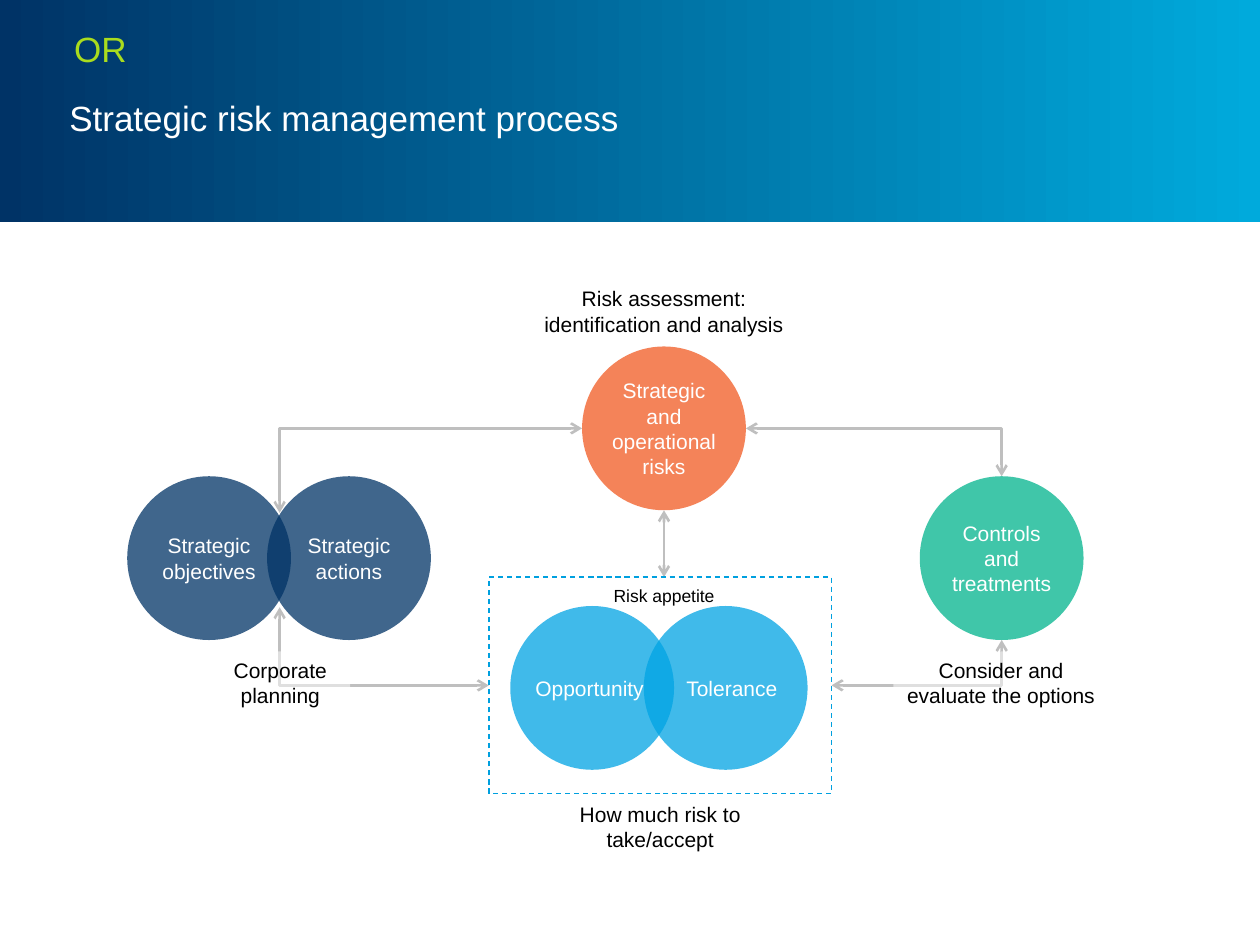
import pptx
import pptx.util
import pptx.dml.color
import pptx.enum.dml
import pptx.enum.shapes
import pptx.enum.text
import pptx.oxml
import pptx.oxml.ns
from dataclasses import dataclass


@dataclass(frozen=True)
class Theme:
    font: str = "Arial"
    white: str = "FFFFFF"
    black: str = "000000"
    navy: str = "003366"
    cyan: str = "00AADC"
    sky: str = "00A4E4"
    orange: str = "F15A22"
    green: str = "00B48D"
    lime: str = "AADC1E"
    arrow: str = "BFBFBF"
    frame: str = "00A0DF"
    heading: int = 20
    body: int = 12
    small: int = 10


THEME = Theme()
WIDTH, HEIGHT = 10, 7.5
BANNER_HEIGHT = 1.76
DIAMETER = 1.3
RADIUS = DIAMETER / 2
UPPER, MIDDLE, LOWER = 3.4, 4.43, 5.46  # centre lines of the circles
RISK_X, CONTROL_X, OVERLAP_X = 5.27, 7.95, 2.22
FRAME = (3.88, 4.58, 2.72, 1.72)
FRAME_RIGHT = FRAME[0] + FRAME[2]
FRAME_MIDDLE = FRAME[1] + FRAME[3] / 2

# text, centre x, centre y, colour, left inset, right inset
CIRCLES = [
    ("Strategic actions", 2.77, MIDDLE, THEME.navy, 0.1, 0.1),
    ("Strategic objectives", 1.66, MIDDLE, THEME.navy, 0.04, 0.04),
    ("Tolerance", 5.76, LOWER, THEME.sky, 0.1, 0),
    ("Opportunity", 4.7, LOWER, THEME.sky, 0, 0.04),
    ("Strategic and operational risks", RISK_X, UPPER, THEME.orange, 0.04, 0.04),
    ("Controls and treatments", CONTROL_X, MIDDLE, THEME.green, 0.04, 0.04),
]
# text, (left, top, width, height), size
CAPTIONS = [
    ("How much risk to take/accept", (4.15, 6.31, 2.18, 0.5), THEME.body),
    ("Risk assessment: identification and analysis", (4.12, 2.22, 2.3, 0.5), THEME.body),
    ("Risk appetite", (4.43, 4.59, 1.68, 0.27), THEME.small),
]
VEILED_CAPTIONS = [
    ("Consider and evaluate the options", (7.09, 5.17, 1.71, 0.5)),
    ("Corporate planning", (1.67, 5.17, 1.11, 0.5)),
]
# Each elbow leaves horizontally from its first point and turns once.
ELBOWS = [
    ((RISK_X - RADIUS, UPPER), (OVERLAP_X, 4.07)),
    ((FRAME[0], FRAME_MIDDLE), (OVERLAP_X, 4.82)),
    ((RISK_X + RADIUS, UPPER), (CONTROL_X, MIDDLE - RADIUS)),
    ((FRAME_RIGHT, FRAME_MIDDLE), (CONTROL_X, MIDDLE + RADIUS)),
]

SHAPES = pptx.enum.shapes.MSO_SHAPE
CONNECTORS = pptx.enum.shapes.MSO_CONNECTOR
ANCHOR = pptx.enum.text.MSO_ANCHOR
ALIGN = pptx.enum.text.PP_ALIGN


def inches(values):
    return [pptx.util.Inches(value) for value in values]


def rgb(value):
    return pptx.dml.color.RGBColor.from_string(value)


def add_child(parent, tag, **attributes):
    child = pptx.oxml.ns.qn(tag)
    element = parent.makeelement(child, attributes)
    parent.append(element)


def write(box, text, color, size, align=ALIGN.CENTER, anchor=ANCHOR.TOP,
          insets=(0.1, 0.05, 0.1, 0.05)):
    frame = box.text_frame
    frame.text = text
    frame.word_wrap = True
    frame.vertical_anchor = anchor
    (frame.margin_left, frame.margin_top,
     frame.margin_right, frame.margin_bottom) = inches(insets)
    paragraph = frame.paragraphs[0]
    paragraph.alignment = align
    for span in paragraph.runs:
        span.font.name = THEME.font
        span.font.size = pptx.util.Pt(size)
        span.font.color.rgb = rgb(color)


def add_shape(page, kind, area, color=None, opacity=100):
    shape = page.shapes.add_shape(kind, *inches(area))
    shape.shadow.inherit = False
    shape.line.fill.background()
    if color is None:
        shape.fill.background()
    else:
        shape.fill.solid()
        shape.fill.fore_color.rgb = rgb(color)
        if opacity < 100:
            fill = shape.fill._xPr.find(pptx.oxml.ns.qn("a:solidFill"))
            add_child(fill[0], "a:alpha", val=str(opacity * 1000))
    return shape


def add_arrow(page, kind, start, end):
    """Draw a connector with an open arrowhead at both ends."""
    arrow = page.shapes.add_connector(kind, *inches(start + end))
    arrow.line.color.rgb = rgb(THEME.arrow)
    arrow.line.width = pptx.util.Pt(1.5)
    properties = arrow._element.spPr
    if kind == CONNECTORS.ELBOW:
        properties.find(pptx.oxml.ns.qn("a:prstGeom")).set("prst", "bentConnector2")
    line = arrow.line._get_or_add_ln()
    add_child(line, "a:headEnd", type="arrow")
    add_child(line, "a:tailEnd", type="arrow")
    add_child(properties, "a:effectLst")


def add_banner(page):
    banner = add_shape(page, SHAPES.RECTANGLE, (0, 0, WIDTH, BANNER_HEIGHT), THEME.navy)
    banner.fill.gradient()
    banner.fill.gradient_angle = 0
    for stop, color, position in zip(banner.fill.gradient_stops,
                                     (THEME.navy, THEME.cyan), (0, 1)):
        stop.color.rgb = rgb(color)
        stop.position = position
    title = page.shapes.add_textbox(*inches((0.51, 0.3, 7.48, 1.26)))
    write(title, "Strategic risk management process", THEME.white, THEME.heading,
          ALIGN.LEFT, ANCHOR.MIDDLE, (0.04,) * 4)


def main():
    deck = pptx.Presentation()
    deck.slide_width, deck.slide_height = inches((WIDTH, HEIGHT))
    page = deck.slides.add_slide(deck.slide_layouts[6])
    add_banner(page)

    for text, x, y, color, left, right in CIRCLES:
        area = (x - RADIUS, y - RADIUS, DIAMETER, DIAMETER)
        circle = add_shape(page, SHAPES.OVAL, area, color, 75)
        write(circle, text, THEME.white, THEME.body, anchor=ANCHOR.MIDDLE,
              insets=(left, 0.05, right, 0.05))

    add_arrow(page, CONNECTORS.STRAIGHT, (RISK_X, FRAME[1]), (RISK_X, UPPER + RADIUS))
    appetite = add_shape(page, SHAPES.RECTANGLE, FRAME)
    appetite.line.color.rgb = rgb(THEME.frame)
    appetite.line.width = pptx.util.Pt(0.75)
    appetite.line.dash_style = pptx.enum.dml.MSO_LINE.DASH

    for text, area, size in CAPTIONS:
        caption = page.shapes.add_textbox(*inches(area))
        write(caption, text, THEME.black, size)
    for start, end in ELBOWS:
        add_arrow(page, CONNECTORS.ELBOW, start, end)
    for text, area in VEILED_CAPTIONS:
        veil = add_shape(page, SHAPES.RECTANGLE, area, THEME.white, 50)
        write(veil, text, THEME.black, THEME.body)

    label = page.shapes.add_textbox(*inches((0.49, 0.17, 2.26, 0.44)))
    write(label, "OR", THEME.lime, THEME.heading, ALIGN.LEFT)
    deck.save("out.pptx")


if __name__ == "__main__":
    main()
